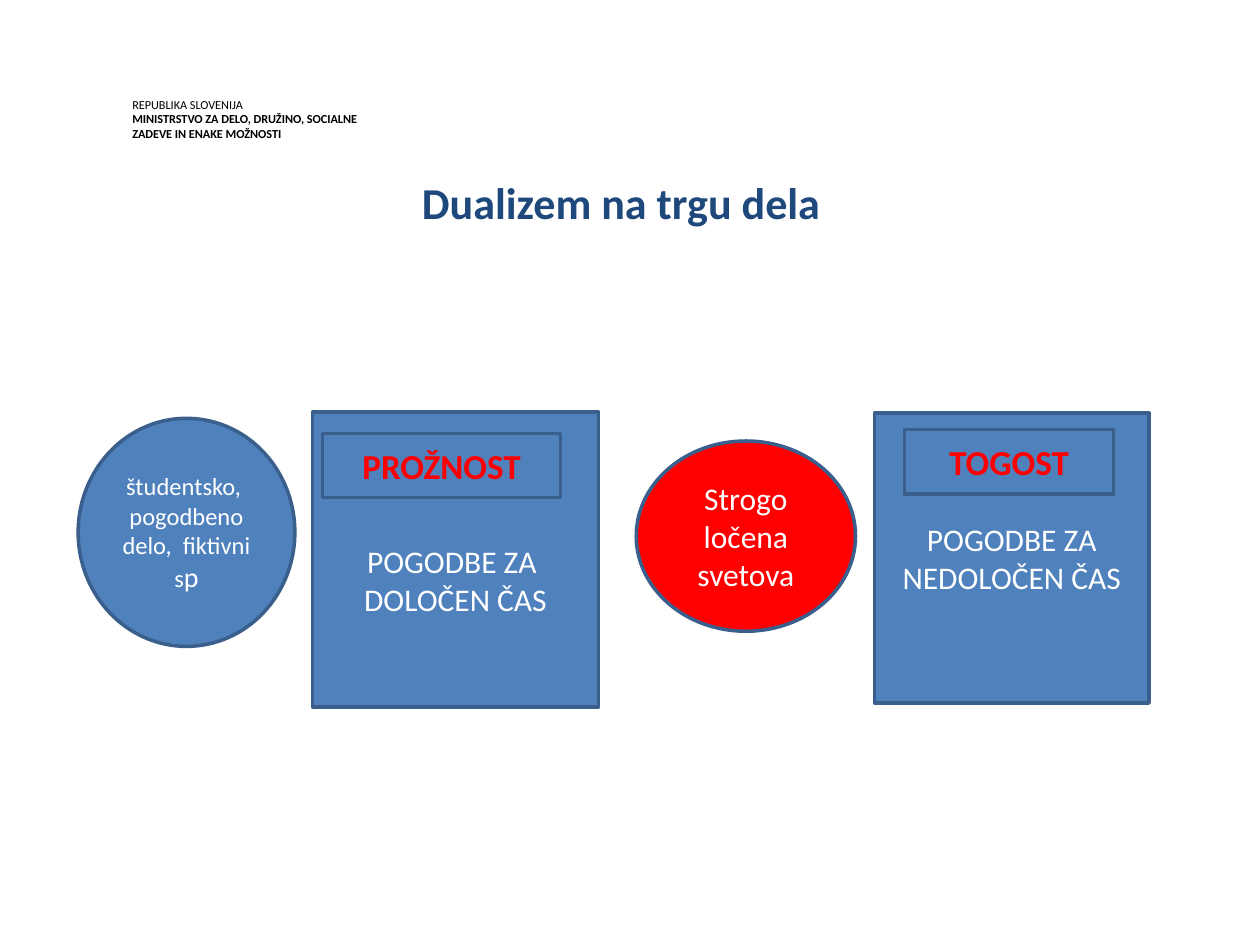
"""Build the slide on dualism in the labour market."""
from dataclasses import dataclass

from pptx import Presentation
from pptx.dml.color import RGBColor
from pptx.enum.shapes import MSO_SHAPE
from pptx.enum.text import MSO_ANCHOR, PP_ALIGN
from pptx.util import Inches, Pt

RECT, OVAL = MSO_SHAPE.RECTANGLE, MSO_SHAPE.OVAL
LEFT, CENTER = PP_ALIGN.LEFT, PP_ALIGN.CENTER
TOP, MIDDLE = MSO_ANCHOR.TOP, MSO_ANCHOR.MIDDLE
FONT = "Calibri"
COLORS = {
    "black": "000000",
    "white": "FFFFFF",
    "navy": "1F497D",
    "blue": "4F81BD",
    "outline": "3A5F8C",
    "red": "FF0000",
}
WIDTH, HEIGHT = Inches(10), Inches(7.5)
COLS, ROWS = 100, 75


@dataclass(frozen=True)
class Area:
    col: float
    row: float
    cols: float
    rows: float

    def box(self) -> tuple[int, int, int, int]:
        dx, dy = WIDTH / COLS, HEIGHT / ROWS
        return (round(self.col * dx), round(self.row * dy),
                round(self.cols * dx), round(self.rows * dy))


@dataclass(frozen=True)
class Run:
    text: str
    size: float | None = None


@dataclass(frozen=True)
class Para:
    runs: tuple[Run, ...]
    size: float
    color: str = "white"
    bold: bool = False
    align: PP_ALIGN = CENTER
    leading: float | None = None


@dataclass(frozen=True)
class Panel:
    kind: MSO_SHAPE
    area: Area
    paras: tuple[Para, ...]
    fill: str = "blue"
    top_inset: float = 0.05


def line(text: str, size: float, **style) -> Para:
    return Para((Run(text),), size, **style)


def heading(text: str) -> tuple[Para, ...]:
    return (line(text, 20, color="red", bold=True),)


MINISTRY = (
    line("REPUBLIKA SLOVENIJA", 7, color="black", align=LEFT, leading=8.4),
    line("MINISTRSTVO ZA DELO, DRUŽINO, SOCIALNE ZADEVE IN ENAKE MOŽNOSTI",
         7, color="black", bold=True, align=LEFT, leading=8.4),
)
TITLE = (line("Dualizem na trgu dela", 25.2, color="navy", bold=True),)
PANELS = (
    Panel(RECT, Area(24.8, 32.7, 22.7, 23.4),
          (line("POGODBE ZA ", 18), line("DOLOČEN ČAS", 18)), top_inset=0.37),
    Panel(RECT, Area(69.4, 32.8, 21.8, 23),
          (line("POGODBE ZA NEDOLOČEN ČAS", 18),)),
    Panel(RECT, Area(25.6, 34.4, 18.9, 5.1), heading("PROŽNOST")),
    Panel(RECT, Area(71.8, 34.1, 16.6, 5.1), heading("TOGOST")),
    Panel(OVAL, Area(6.2, 33.2, 17.2, 18.1),
          (line("študentsko, ", 14),
           Para((Run("pogodbeno delo,  fiktivni s"), Run("p", 16)), 14))),
    Panel(OVAL, Area(50.5, 35, 17.4, 15.1),
          (line("Strogo ločena svetova", 18),), fill="red"),
)


def rgb(name: str) -> RGBColor:
    return RGBColor.from_string(COLORS[name])


def write(tf, paras: tuple[Para, ...], anchor: MSO_ANCHOR) -> None:
    tf.word_wrap = True
    tf.vertical_anchor = anchor
    for i, para in enumerate(paras):
        p = tf.add_paragraph() if i else tf.paragraphs[0]
        p.alignment = para.align
        if para.leading:
            p.line_spacing = Pt(para.leading)
        p.font.name = FONT
        p.font.size = Pt(para.size)
        p.font.bold = para.bold
        p.font.color.rgb = rgb(para.color)
        for run in para.runs:
            r = p.add_run()
            r.text = run.text
            if run.size:
                r.font.size = Pt(run.size)


def add_text(s, area: Area, paras: tuple[Para, ...],
             anchor: MSO_ANCHOR, inset: float) -> None:
    tf = s.shapes.add_textbox(*area.box()).text_frame
    tf.margin_left = tf.margin_right = Inches(inset)
    tf.margin_top = tf.margin_bottom = Inches(inset)
    write(tf, paras, anchor)


def add_panel(s, panel: Panel) -> None:
    sp = s.shapes.add_shape(panel.kind, *panel.area.box())
    sp.shadow.inherit = False
    sp.fill.solid()
    sp.fill.fore_color.rgb = rgb(panel.fill)
    sp.line.color.rgb = rgb("outline")
    sp.line.width = Pt(2)
    sp.text_frame.margin_top = Inches(panel.top_inset)
    write(sp.text_frame, panel.paras, MIDDLE)


def main() -> None:
    prs = Presentation()
    prs.slide_width, prs.slide_height = WIDTH, HEIGHT
    s = prs.slides.add_slide(prs.slide_layouts[6])
    add_text(s, Area(10.5, 7.7, 18.2, 3.4), MINISTRY, TOP, 0)
    add_text(s, Area(4.3, 13.4, 90, 5.2), TITLE, MIDDLE, 0.05)
    for panel in PANELS:
        add_panel(s, panel)
    prs.save("out.pptx")


if __name__ == "__main__":
    main()
